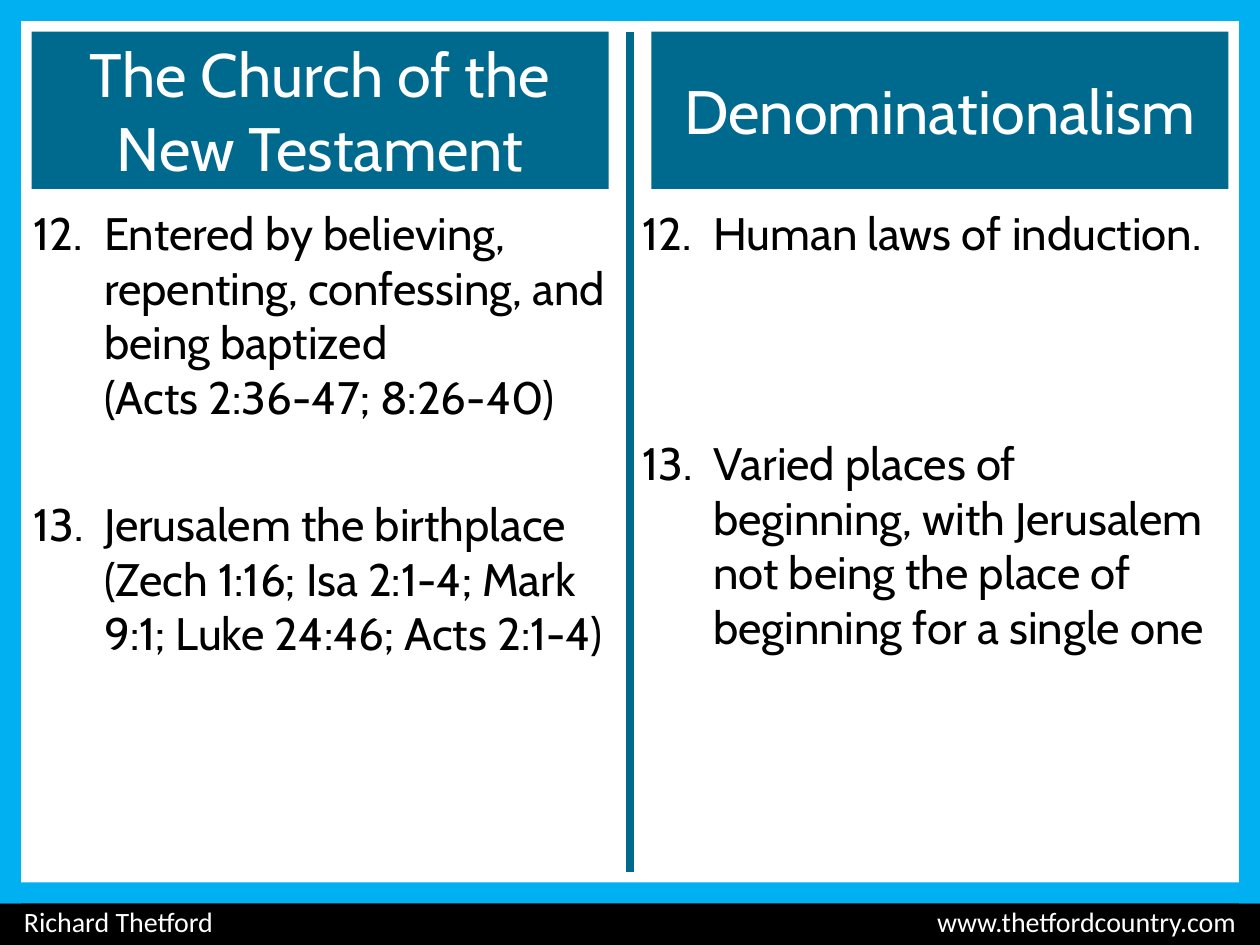
import copy
from dataclasses import dataclass

import pptx
import pptx.dml.color
import pptx.enum.shapes
import pptx.enum.text
import pptx.oxml
import pptx.oxml.ns
import pptx.util

HEADINGS = ["The Church of the New Testament", "Denominationalism"]
FIRST_NUMBER = 12
POINTS = [
    [
        "Entered by believing, repenting, confessing, and being baptized\v(Acts 2:36-47; 8:26-40)",
        "Jerusalem the birthplace\v(Zech 1:16; Isa 2:1-4; Mark 9:1; Luke 24:46; Acts 2:1-4)",
    ],
    [
        "Human laws of induction.",
        "Varied places of beginning, with Jerusalem not being the place of beginning for a single one",
    ],
]
POINT_GAPS = [[5.2, 41.4], [5.2, 100.2]]
FOOTER = "Richard Thetford\twww.thetfordcountry.com"


@dataclass(frozen=True)
class Theme:
    teal: str = "00698E"
    sky: str = "00B0F0"
    black: str = "000000"
    white: str = "FFFFFF"
    font: str = "Cabin"
    footer_font: str = "Calibri"
    heading_size: int = 35
    body_size: int = 26
    footer_size: int = 16
    divider_width: float = 4.5


THEME = Theme()
WIDTH, HEIGHT = 10, 7.5
BORDER = WIDTH / 60
MARGIN = 0.25
FRAME_HEIGHT = 7.17
FOOTER_TOP = 7.13
HEADING_WIDTH, HEADING_HEIGHT = 4.58, 1.25
LIST_TOP, LIST_WIDTH, LIST_HEIGHT = 1.58, 4.75, 5.17
HEADING_LEFTS = [MARGIN, WIDTH - MARGIN - HEADING_WIDTH]
LIST_LEFTS = [BORDER, WIDTH / 2]
INDENT = 0.56
FOOTER_INSET = 0.19

Inches = pptx.util.Inches
Align = pptx.enum.text.PP_ALIGN
Anchor = pptx.enum.text.MSO_ANCHOR


def color(value):
    return pptx.dml.color.RGBColor.from_string(value)


def place(shape, left, top, width, height):
    shape.left, shape.top = Inches(left), Inches(top)
    shape.width, shape.height = Inches(width), Inches(height)


def paint(shape, fill):
    shape.fill.solid()
    shape.fill.fore_color.rgb = color(fill)
    shape.line.fill.background()


def add_block(slide, left, top, width, height, fill):
    shape = slide.shapes.add_shape(
        pptx.enum.shapes.MSO_SHAPE.RECTANGLE,
        Inches(left), Inches(top), Inches(width), Inches(height))
    shape.shadow.inherit = False
    paint(shape, fill)
    return shape


def write(paragraph, text, *, size, fill, font=THEME.font, align=Align.LEFT, before=0):
    paragraph.text = text
    paragraph.alignment = align
    paragraph.space_before = pptx.util.Pt(before)
    for run in paragraph.runs:
        run.font.name = font
        run.font.size = pptx.util.Pt(size)
        run.font.color.rgb = color(fill)
    for line_break in paragraph._p.findall(pptx.oxml.ns.qn("a:br")):
        line_break.append(copy.deepcopy(paragraph.runs[0].font._rPr))


def prepare_frame(shape, anchor):
    frame = shape.text_frame
    frame.word_wrap = True
    frame.auto_size = pptx.enum.text.MSO_AUTO_SIZE.NONE
    frame.vertical_anchor = anchor
    return frame


def append_property(paragraph, xml):
    namespace = pptx.oxml.ns.nsdecls("a")
    properties = paragraph._p.get_or_add_pPr()
    properties.append(pptx.oxml.parse_xml(xml.replace("NS", namespace, 1)))
    return properties


def fill_heading(shape, text):
    paint(shape, THEME.teal)
    frame = prepare_frame(shape, Anchor.MIDDLE)
    write(frame.paragraphs[0], text, size=THEME.heading_size,
          fill=THEME.white, align=Align.CENTER)


def fill_list(shape, points, gaps):
    frame = prepare_frame(shape, Anchor.TOP)
    for index, (text, gap) in enumerate(zip(points, gaps)):
        paragraph = frame.add_paragraph() if index else frame.paragraphs[0]
        write(paragraph, text, size=THEME.body_size, fill=THEME.black, before=gap)
        properties = append_property(
            paragraph, f'<a:buFont NS typeface="+mj-lt"/>')
        append_property(
            paragraph, f'<a:buAutoNum NS type="arabicPeriod" startAt="{FIRST_NUMBER}"/>')
        properties.set("marL", str(Inches(INDENT)))
        properties.set("indent", str(-Inches(INDENT)))


def add_footer(slide):
    bar = add_block(slide, 0, FOOTER_TOP, WIDTH, HEIGHT - FOOTER_TOP, THEME.black)
    frame = prepare_frame(bar, Anchor.MIDDLE)
    frame.margin_left = Inches(FOOTER_INSET)
    frame.margin_right = Inches(FOOTER_INSET / 2)
    frame.margin_top = frame.margin_bottom = 0
    write(frame.paragraphs[0], FOOTER, size=THEME.footer_size,
          fill=THEME.white, font=THEME.footer_font)
    stop = Inches(WIDTH - 2 * FOOTER_INSET)
    append_property(frame.paragraphs[0],
                    f'<a:tabLst NS><a:tab pos="{stop}" algn="r"/></a:tabLst>')


def add_border(slide):
    for left in (0, WIDTH - BORDER):
        add_block(slide, left, 0, BORDER, FRAME_HEIGHT, THEME.sky)
    for top in (0, FRAME_HEIGHT - BORDER):
        add_block(slide, 0, top, WIDTH, BORDER, THEME.sky)


def add_divider(slide):
    middle = Inches(WIDTH / 2)
    divider = slide.shapes.add_connector(
        pptx.enum.shapes.MSO_CONNECTOR.STRAIGHT,
        middle, Inches(MARGIN), middle, Inches(FRAME_HEIGHT - MARGIN))
    divider.line.color.rgb = color(THEME.teal)
    divider.line.width = pptx.util.Pt(THEME.divider_width)
    divider._element.spPr.append(pptx.oxml.parse_xml(
        f'<a:effectLst {pptx.oxml.ns.nsdecls("a")}/>'))


def main():
    presentation = pptx.Presentation()
    presentation.slide_width = Inches(WIDTH)
    presentation.slide_height = Inches(HEIGHT)
    slide = presentation.slides.add_slide(
        presentation.slide_layouts.get_by_name("Two Content"))
    title, *bodies = list(slide.placeholders)[:3]

    add_footer(slide)
    add_border(slide)
    place(title, HEADING_LEFTS[0], MARGIN, HEADING_WIDTH, HEADING_HEIGHT)
    second_heading = add_block(slide, HEADING_LEFTS[1], MARGIN,
                               HEADING_WIDTH, HEADING_HEIGHT, THEME.teal)
    for shape, text in zip((title, second_heading), HEADINGS):
        fill_heading(shape, text)
    add_divider(slide)
    for body, left, points, gaps in zip(bodies, LIST_LEFTS, POINTS, POINT_GAPS):
        place(body, left, LIST_TOP, LIST_WIDTH, LIST_HEIGHT)
        fill_list(body, points, gaps)
    presentation.save("out.pptx")


if __name__ == "__main__":
    main()
